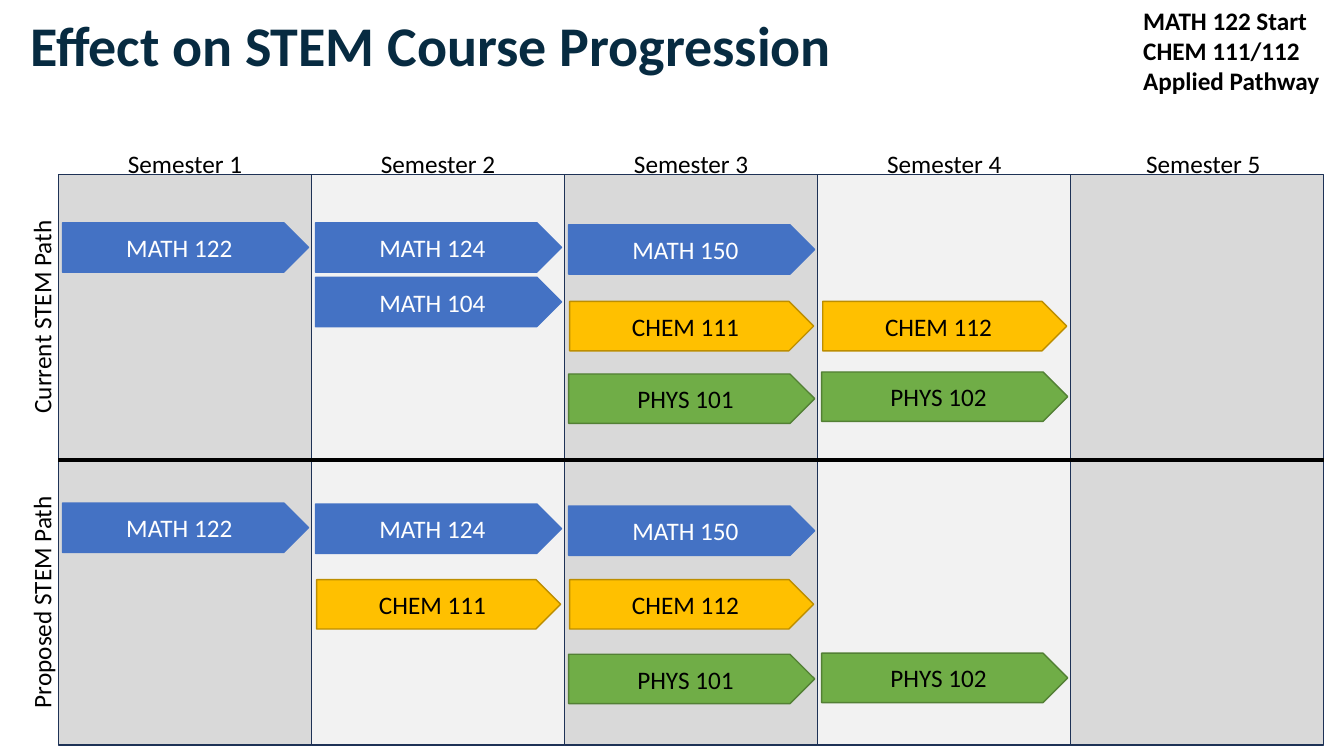
from pptx import Presentation, util as u
from pptx.dml.color import RGBColor
from pptx.enum import shapes, text
from pptx.oxml import parse_xml
from pptx.oxml.ns import nsdecls

SLIDE_W, SLIDE_H = 13.33, 7.5

# Semester columns and path lanes
GRID_LEFT, GRID_TOP = 0.58, 1.73
SEMESTER_W, LANE_H = 2.51, 2.83
SEMESTERS = 5
GRID_RIGHT = GRID_LEFT + SEMESTERS * SEMESTER_W
LABEL_H = 0.4
COURSE_H = 0.49

# Subject: fill, outline, text colour, inset in column, width
SUBJECTS = {
    "MATH": ("4472C4", "4472C4", "FFFFFF", 0.04, 2.44),
    "CHEM": ("FFC000", "BD8E00", "000000", 0.05, 2.42),
    "PHYS": ("70AD47", "538035", "000000", 0.04, 2.44),
}

# Path: label width, courses as (name, semester, distance from lane top)
PATHS = {
    "Current STEM Path": (2.13, [
        ("MATH 122", 1, 0.48), ("MATH 124", 2, 0.48), ("MATH 150", 3, 0.5),
        ("MATH 104", 2, 1.02), ("CHEM 111", 3, 1.26), ("CHEM 112", 4, 1.26),
        ("PHYS 101", 3, 1.98), ("PHYS 102", 4, 1.96)]),
    "Proposed STEM Path": (2.32, [
        ("MATH 122", 1, 0.43), ("MATH 124", 2, 0.44), ("MATH 150", 3, 0.46),
        ("CHEM 111", 2, 1.19), ("CHEM 112", 3, 1.19),
        ("PHYS 101", 3, 1.93), ("PHYS 102", 4, 1.92)]),
}


def colour(hex_value):
    return RGBColor.from_string(hex_value)


def box(left, top, width, height):
    return [u.Inches(length) for length in (left, top, width, height)]


def semester_left(semester):
    return GRID_LEFT + (semester - 1) * SEMESTER_W


def lane_top(lane):
    return GRID_TOP + lane * LANE_H


def write(frame, lines, ink="000000", size=18, bold=False,
          align=text.PP_ALIGN.CENTER, spacing=None):
    font_format = {"name": "Calibri", "size": u.Pt(size), "bold": bold}
    frame.text = "\n".join(lines)
    for paragraph in frame.paragraphs:
        paragraph.alignment = align
        paragraph.line_spacing = spacing
        for run in paragraph.runs:
            for attribute, value in font_format.items():
                setattr(run.font, attribute, value)
            run.font.color.rgb = colour(ink)


def add_panel(slide, preset, place, fill, outline):
    panel = slide.shapes.add_shape(preset, *box(*place))
    panel.shadow.inherit = False
    panel.fill.solid()
    panel.fill.fore_color.rgb = colour(fill)
    panel.line.color.rgb = colour(outline)
    panel.line.width = u.Pt(1)
    return panel


def add_label(slide, lines, place, rotation=0, **style):
    label = slide.shapes.add_textbox(*box(*place))
    label.rotation = rotation
    label.text_frame.word_wrap = False
    write(label.text_frame, lines, **style)


def add_course(slide, name, semester, top):
    fill, outline, ink, inset, width = SUBJECTS[name.split()[0]]
    course = add_panel(slide, shapes.MSO_SHAPE.PENTAGON,
                       (semester_left(semester) + inset, top, width, COURSE_H),
                       fill, outline)
    course.text_frame.vertical_anchor = text.MSO_ANCHOR.MIDDLE
    write(course.text_frame, [name], ink)


def add_divider(slide, y):
    divider = slide.shapes.add_connector(
        shapes.MSO_CONNECTOR.STRAIGHT,
        *box(GRID_LEFT, y, GRID_RIGHT, y))
    divider.line.color.rgb = colour("000000")
    divider.line.width = u.Pt(3)
    divider._element.spPr.append(parse_xml(f"<a:effectLst {nsdecls('a')}/>"))


def add_title(slide, wording):
    title = slide.shapes.title
    place = box(0.2, 0.13, 11.5, 0.76)
    for attribute, value in zip(("left", "top", "width", "height"), place):
        setattr(title, attribute, value)
    frame_format = {"word_wrap": True, "auto_size": text.MSO_AUTO_SIZE.NONE,
                    "vertical_anchor": text.MSO_ANCHOR.TOP}
    for attribute, value in frame_format.items():
        setattr(title.text_frame, attribute, value)
    write(title.text_frame, [wording], "072B41", 40, True,
          text.PP_ALIGN.LEFT, 0.9)


def main():
    deck = Presentation()
    deck.slide_width, deck.slide_height = u.Inches(SLIDE_W), u.Inches(SLIDE_H)
    slide = deck.slides.add_slide(deck.slide_layouts[5])

    # Heading and pathway note
    add_title(slide, "Effect on STEM Course Progression")
    add_label(slide, ["MATH 122 Start", "CHEM 111/112", "Applied Pathway"],
              (11.24, 0, 1.96, 1.01), bold=True, align=text.PP_ALIGN.LEFT)

    # Semester columns, the last heading set slightly to the right
    for semester in range(1, SEMESTERS + 1):
        left = semester_left(semester)
        add_panel(slide, shapes.MSO_SHAPE.RECTANGLE,
                  (left, GRID_TOP, SEMESTER_W, 2 * LANE_H),
                  "D9D9D9" if semester % 2 else "F2F2F2", "1E3256")
        nudge = 0.06 if semester == SEMESTERS else 0
        add_label(slide, [f"Semester {semester}"],
                  (left + 0.58 + nudge, 1.42, 1.35, LABEL_H))
    add_divider(slide, lane_top(1))

    # Path lanes with their courses
    for lane, (path_name, (label_w, courses)) in enumerate(PATHS.items()):
        middle = lane_top(lane) + LANE_H / 2
        add_label(slide, [path_name],
                  (0.41 - label_w / 2, middle - LABEL_H / 2, label_w, LABEL_H),
                  rotation=270)
        for name, semester, offset in courses:
            add_course(slide, name, semester, lane_top(lane) + offset)

    deck.save("out.pptx")


if __name__ == "__main__":
    main()
